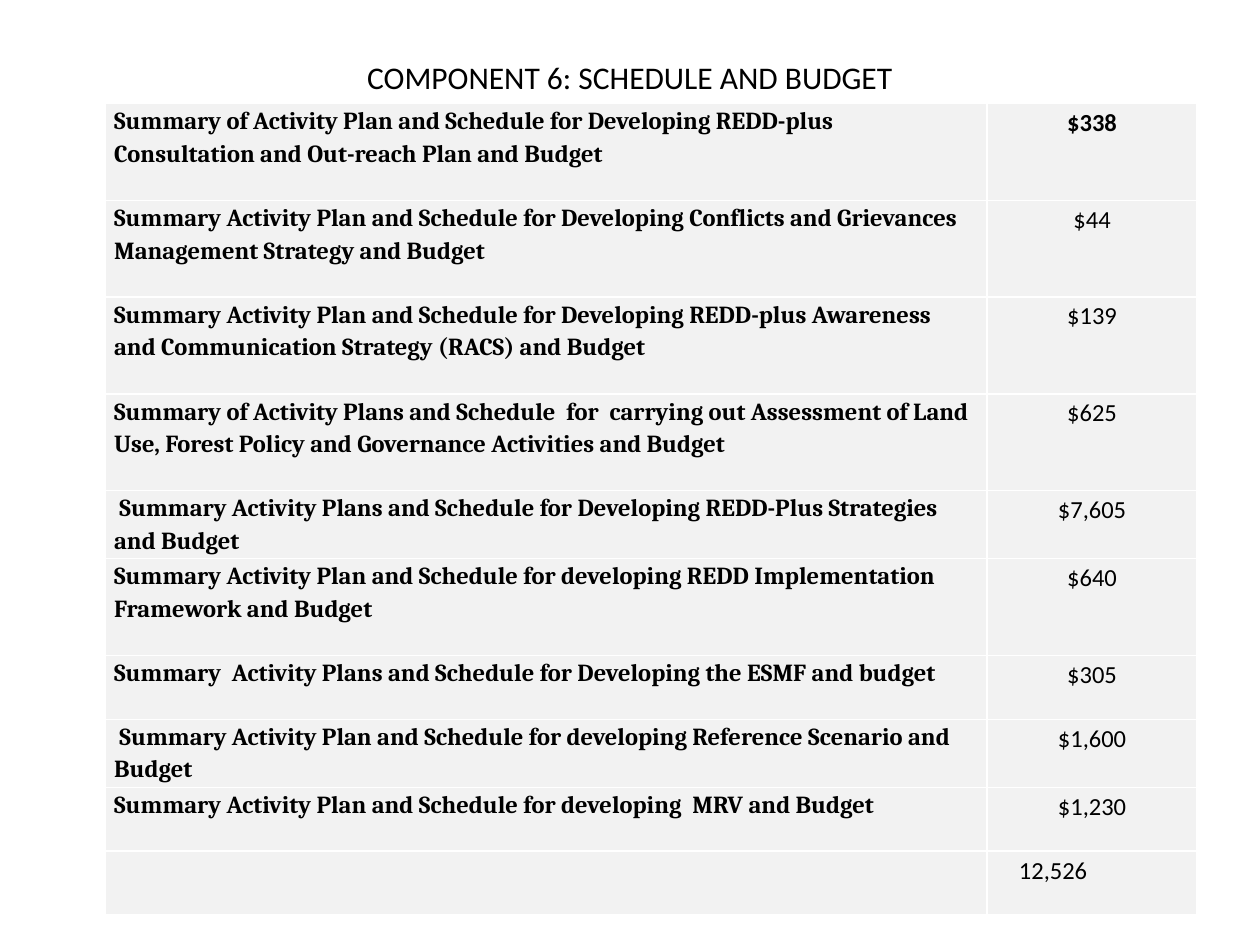
from pptx import Presentation
from pptx.dml.color import RGBColor
from pptx.enum.text import MSO_ANCHOR, PP_ALIGN
from pptx.util import Cm, Pt

LEFT, CENTER = PP_ALIGN.LEFT, PP_ALIGN.CENTER
MIDDLE = MSO_ANCHOR.MIDDLE

TITLE = "COMPONENT 6: SCHEDULE AND BUDGET"
TALL, MEDIUM, SHORT = 1.95, 1.37, 1.29
ACTIVITIES = [
    ("Summary of Activity Plan and Schedule for Developing REDD-plus Consultation and Out-reach Plan and Budget", "$338", TALL),
    ("Summary Activity Plan and Schedule for Developing Conflicts and Grievances Management Strategy and Budget", "$44", TALL),
    ("Summary Activity Plan and Schedule for Developing REDD-plus Awareness and Communication Strategy (RACS) and Budget", "$139", TALL),
    ("Summary of Activity Plans and Schedule  for  carrying out Assessment of Land Use, Forest Policy and Governance Activities and Budget", "$625", TALL),
    (" Summary Activity Plans and Schedule for Developing REDD-Plus Strategies  and Budget", "$7,605", MEDIUM),
    ("Summary Activity Plan and Schedule for developing REDD Implementation Framework and Budget", "$640", TALL),
    ("Summary  Activity Plans and Schedule for Developing the ESMF and budget", "$305", SHORT),
    (" Summary Activity Plan and Schedule for developing Reference Scenario and Budget", "$1,600", MEDIUM),
    ("Summary Activity Plan and Schedule for developing  MRV and Budget", "$1,230", SHORT),
]
TOTAL = "12,526"
COLUMNS = [17.78, 4.23]
INSET, TOTAL_INSET = 0.18, 0.64


def color(value):
    return RGBColor.from_string(value)


def format_text(p, font, size, align, bold=False):
    p.alignment = align
    for r in p.runs:
        r.font.name = font
        r.font.size = Pt(size)
        r.font.bold = bold
        r.font.color.rgb = color("000000")


def fill_cell(cell, text, font, align, bold=False, inset=INSET):
    cell.fill.solid()
    cell.fill.fore_color.rgb = color("F2F2F2")
    cell.margin_left, cell.margin_right = Cm(inset), Cm(INSET)
    cell.margin_top = cell.margin_bottom = 0
    p = cell.text_frame.paragraphs[0]
    p.text = text
    p.line_spacing = 1.15
    format_text(p, font, 14, align, bold)


prs = Presentation()
prs.slide_width, prs.slide_height = Cm(25.4), Cm(19.05)
s = prs.slides.add_slide(prs.slide_layouts[5])

title = s.shapes.title
title.left, title.top, title.width, title.height = Cm(1.27), Cm(0.76), Cm(22.86), Cm(1.57)
title.text_frame.text = TITLE
title.text_frame.vertical_anchor = MIDDLE
format_text(title.text_frame.paragraphs[0], "Calibri", 18, CENTER)

heights = [height for _, _, height in ACTIVITIES] + [SHORT]
table = s.shapes.add_table(len(heights), len(COLUMNS), Cm(2.12), Cm(2.09),
                           Cm(sum(COLUMNS)), Cm(sum(heights))).table
table.horz_banding = False
for column, width in zip(table.columns, COLUMNS):
    column.width = Cm(width)
for row, height in zip(table.rows, heights):
    row.height = Cm(height)

for i, (activity, budget, _) in enumerate(ACTIVITIES):
    fill_cell(table.cell(i, 0), activity, "Cambria", LEFT, bold=True)
    fill_cell(table.cell(i, 1), budget, "Calibri", CENTER, bold=i == 0)

last = len(ACTIVITIES)
fill_cell(table.cell(last, 0), "", "Cambria", LEFT)
fill_cell(table.cell(last, 1), TOTAL, "Calibri", LEFT, inset=TOTAL_INSET)

prs.save("out.pptx")
